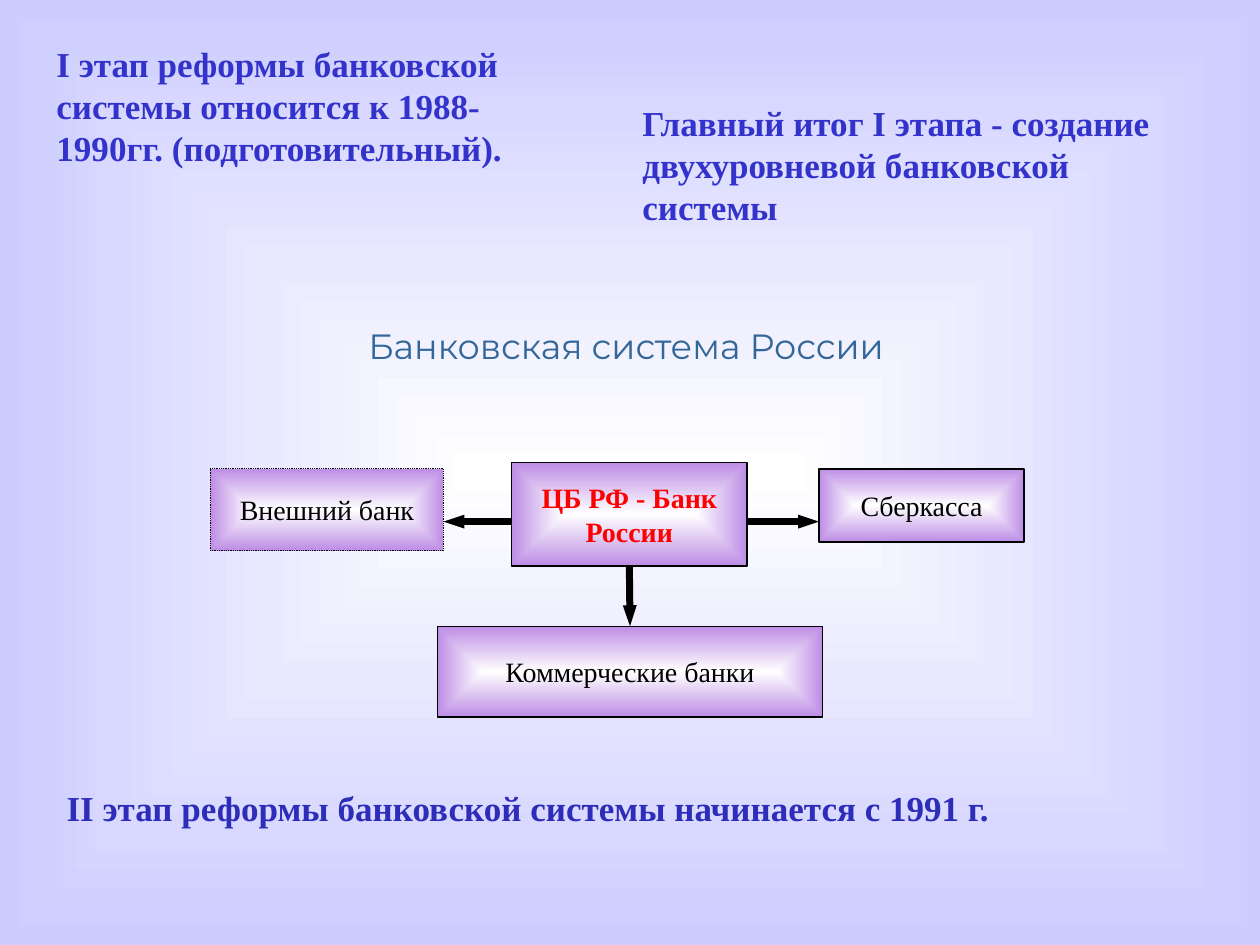
from pptx import Presentation
from pptx import util as u
from pptx.dml.color import RGBColor
from pptx.enum import dml, shapes, text
from pptx.oxml import parse_xml
from pptx.oxml.ns import nsdecls, qn


class Theme:
    serif, display = "Times New Roman", "Montserrat"
    white, lavender, violet = "FFFFFF", "CCCCFF", "BD8DE5"
    black, red, steel = "000000", "FF0000", "336699"
    blue, navy = "3333CC", "2D2DB9"
    large, small = 20, 16
    arrow = 4


# Content: places are left, top, width, height in inches
TITLE = ("Банковская система России", (1.93, 2.49, 6.08, 0.5))
NOTES = [
    ("I этап реформы банковской системы относится к 1988-1990гг. (подготовительный).",
     (0.35, 0.29, 4.33, 1.11), Theme.blue),
    ("Главный итог I этапа - создание двухуровневой банковской системы",
     (5, 0.76, 4.5, 1.11), Theme.blue),
    ("II этап реформы банковской системы начинается с 1991 г.",
     (0.43, 6.19, 9.21, 0.44), Theme.navy),
]
# name: text, place, line width, dotted, main
BANKS = {
    "foreign": ("Внешний банк", (1.67, 3.72, 1.85, 0.65), 0.5, True, False),
    "savings": ("Сберкасса", (6.5, 3.72, 1.63, 0.58), 1, False, False),
    "commercial": ("Коммерческие банки", (3.47, 4.97, 3.06, 0.72), 0.75, False, False),
    "central": ("ЦБ РФ - Банк России", (4.06, 3.67, 1.87, 0.82), 1, False, True),
}
SIDE_ARROW_Y = 4.14


def inches(place):
    return [u.Inches(v) for v in place]


def glow(fill, element, edge):
    """Gradient from a white centre to the edge colour."""
    fill.gradient()
    for stop, color in zip(fill.gradient_stops, (Theme.white, edge)):
        stop.color.rgb = RGBColor.from_string(color)
    fill.gradient_stops[0].position, fill.gradient_stops[1].position = 0, 1
    grad = element.find(".//" + qn("a:gradFill"))
    grad.remove(grad.find(qn("a:lin")))
    grad.append(parse_xml(
        f'<a:path {nsdecls("a")} path="shape">'
        '<a:fillToRect l="50000" t="50000" r="50000" b="50000"/></a:path>'))


def write(tf, words, size, color, font=Theme.serif, bold=False, align=text.PP_ALIGN.LEFT):
    tf.text = words
    p = tf.paragraphs[0]
    p.alignment = align
    f = p.runs[0].font
    f.name, f.size, f.bold = font, u.Pt(size), bold
    f.color.rgb = RGBColor.from_string(color)


def add_bank(s, words, place, width, dotted, main):
    sp = s.shapes.add_shape(shapes.MSO_SHAPE.RECTANGLE, *inches(place))
    sp.shadow.inherit = False
    glow(sp.fill, sp.element, Theme.violet)
    sp.line.color.rgb = RGBColor.from_string(Theme.black)
    sp.line.width = u.Pt(width)
    if dotted:
        sp.line.dash_style = dml.MSO_LINE.ROUND_DOT
    tf = sp.text_frame
    tf.margin_left = tf.margin_right = tf.margin_top = tf.margin_bottom = u.Inches(0.01)
    tf.vertical_anchor = text.MSO_ANCHOR.MIDDLE
    tf.word_wrap = True
    write(tf, words, Theme.small, Theme.red if main else Theme.black,
          bold=main, align=text.PP_ALIGN.CENTER)
    return sp


def add_arrow(s, x1, y1, x2, y2):
    line = s.shapes.add_connector(shapes.MSO_CONNECTOR.STRAIGHT, x1, y1, x2, y2)
    line.line.color.rgb = RGBColor.from_string(Theme.black)
    line.line.width = u.Pt(Theme.arrow)
    line.line._get_or_add_ln().append(
        parse_xml(f'<a:tailEnd {nsdecls("a")} type="triangle" w="sm" len="med"/>'))
    line.element.spPr.append(parse_xml(f'<a:effectLst {nsdecls("a")}/>'))
    return line


def main():
    prs = Presentation()
    prs.slide_width, prs.slide_height = u.Inches(10), u.Inches(7.5)
    s = prs.slides.add_slide(prs.slide_layouts[5])
    glow(s.background.fill, s.element, Theme.lavender)

    # Diagram heading
    words, place = TITLE
    title = s.shapes.title
    title.left, title.top, title.width, title.height = inches(place)
    tf = title.text_frame
    tf.word_wrap = False
    tf.auto_size = text.MSO_AUTO_SIZE.NONE
    tf.vertical_anchor = text.MSO_ANCHOR.MIDDLE
    write(tf, words, Theme.large, Theme.steel, Theme.display, align=text.PP_ALIGN.CENTER)

    # Banks
    bank = {name: add_bank(s, *parts) for name, parts in BANKS.items()}

    # Arrows from the central bank
    central, left, right = bank["central"], bank["foreign"], bank["savings"]
    y = u.Inches(SIDE_ARROW_Y)
    add_arrow(s, central.left, y, left.left + left.width, y)
    add_arrow(s, central.left + central.width, y, right.left, y)
    down = add_arrow(s, 0, 0, 0, 0)
    down.begin_connect(central, 2)
    down.end_connect(bank["commercial"], 0)

    # Reform stages
    for words, place, color in NOTES:
        tf = s.shapes.add_textbox(*inches(place)).text_frame
        tf.word_wrap = True
        write(tf, words, Theme.large, color, bold=True)

    prs.save("out.pptx")


if __name__ == "__main__":
    main()
